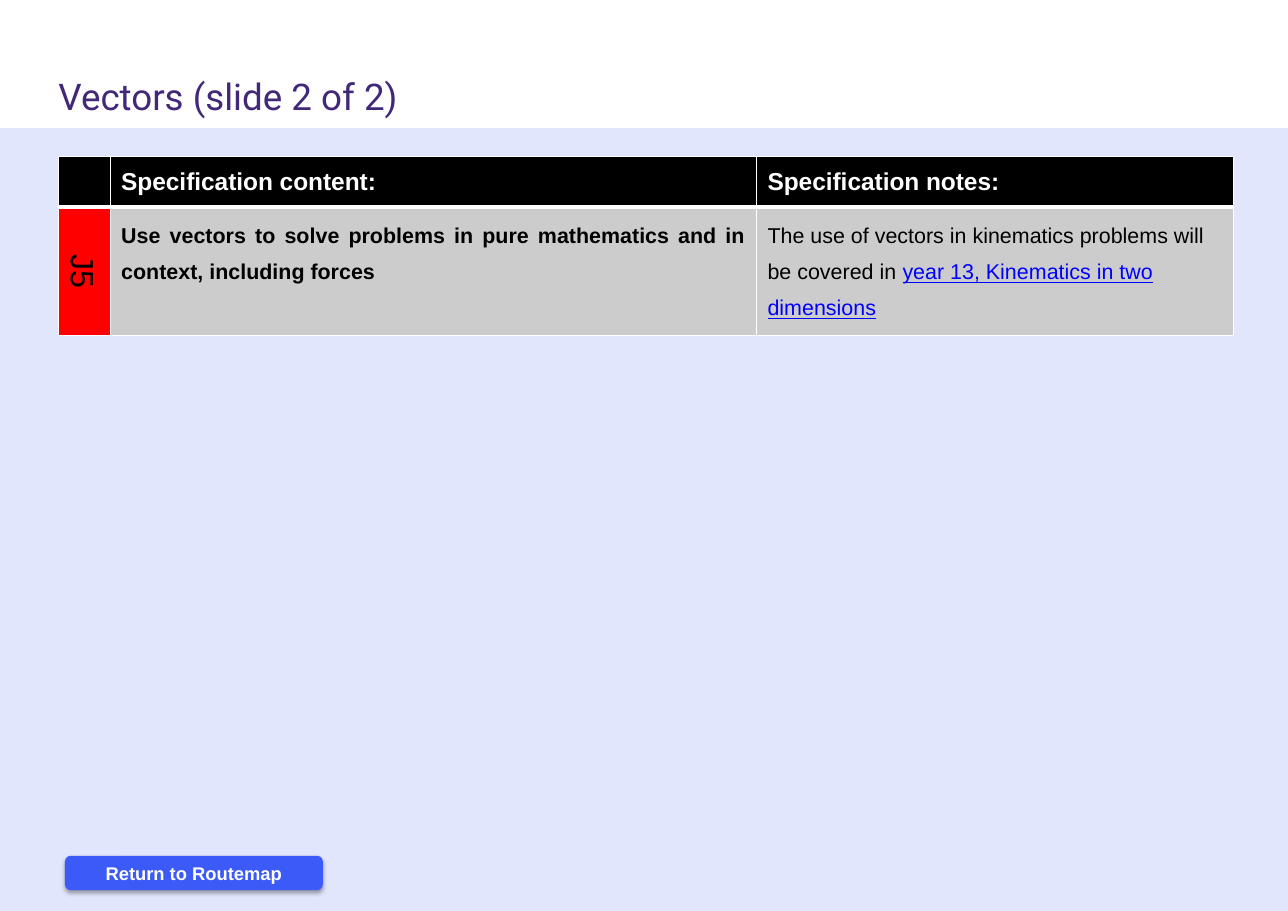
"""Build the second Vectors slide of a mathematics scheme of work."""
from dataclasses import dataclass

import pptx
import pptx.dml.color
import pptx.enum.shapes
import pptx.enum.text
import pptx.oxml
import pptx.oxml.ns
import pptx.util

Pt = pptx.util.Pt
Align = pptx.enum.text.PP_ALIGN
Anchor = pptx.enum.text.MSO_ANCHOR
Shape = pptx.enum.shapes.MSO_SHAPE


@dataclass(frozen=True)
class Theme:
    body_font: str = "Arial"
    title_font: str = "Roboto"
    blue: str = "3B5AF7"
    purple: str = "412878"
    white: str = "FFFFFF"
    black: str = "000000"
    red: str = "FF0000"
    grey: str = "CCCCCC"
    link: str = "0000FF"
    title_size: float = 24
    code_size: float = 21
    header_size: float = 16
    body_size: float = 14
    button_size: float = 12
    tint: int = 15


def rgb(color):
    return pptx.dml.color.RGBColor.from_string(color)


def xml(tag, attributes, content):
    namespace = pptx.oxml.ns.nsdecls("a")
    return pptx.oxml.parse_xml(f"<a:{tag} {namespace} {attributes}>{content}</a:{tag}>")


class SpecificationSlide:
    def __init__(self, slide, theme):
        self.slide = slide
        self.theme = theme

    def format_run(self, run, size, color, bold=False, font=None, underline=None):
        run.font.name = font or self.theme.body_font
        run.font.size = Pt(size)
        run.font.bold = bold
        run.font.underline = underline
        run.font.color.rgb = rgb(color)

    def title(self, text, left, top, width, height):
        heading = self.slide.shapes.title
        heading.left, heading.top = Pt(left), Pt(top)
        heading.width, heading.height = Pt(width), Pt(height)
        frame = heading.text_frame
        frame.text = text
        frame.auto_size = pptx.enum.text.MSO_AUTO_SIZE.NONE
        frame.vertical_anchor = Anchor.MIDDLE
        paragraph = frame.paragraphs[0]
        paragraph.alignment = Align.LEFT
        self.format_run(paragraph.runs[0], self.theme.title_size, self.theme.purple,
                        font=self.theme.title_font)

    def block(self, kind, left, top, width, height):
        shape = self.slide.shapes.add_shape(kind, Pt(left), Pt(top), Pt(width), Pt(height))
        shape.shadow.inherit = False
        shape.fill.solid()
        shape.fill.fore_color.rgb = rgb(self.theme.blue)
        shape.line.fill.background()
        return shape

    def backdrop(self, *place):
        panel = self.block(Shape.RECTANGLE, *place)
        color = panel.fill._xPr.find(".//" + pptx.oxml.ns.qn("a:srgbClr"))
        color.append(xml("alpha", f'val="{self.theme.tint * 1000}"', ""))

    def button(self, text, *place):
        button = self.block(Shape.ROUNDED_RECTANGLE, *place)
        effects = button._element.spPr.find(pptx.oxml.ns.qn("a:effectLst"))
        effects.append(xml(
            "outerShdw",
            f'blurRad="{Pt(3.1)}" dist="{Pt(1.8)}" dir="5400000" rotWithShape="0"',
            f'<a:srgbClr val="{self.theme.black}"><a:alpha val="35000"/></a:srgbClr>'))
        frame = button.text_frame
        frame.text = text
        frame.vertical_anchor = Anchor.MIDDLE
        paragraph = frame.paragraphs[0]
        paragraph.alignment = Align.CENTER
        self.format_run(paragraph.runs[0], self.theme.button_size, self.theme.white, bold=True)

    def table(self, left, top, columns, rows):
        frame = self.slide.shapes.add_table(len(rows), len(columns), Pt(left), Pt(top),
                                            Pt(sum(columns)), Pt(sum(rows)))
        table = frame.table
        table.first_row = table.horz_banding = False
        for column, width in zip(table.columns, columns):
            column.width = Pt(width)
        for row, height in zip(table.rows, rows):
            row.height = Pt(height)
        return table

    def cell(self, cell, fill, edges):
        cell.fill.solid()
        cell.fill.fore_color.rgb = rgb(fill)
        properties = cell._tc.get_or_add_tcPr()
        line = f'<a:solidFill><a:srgbClr val="{self.theme.white}"/></a:solidFill>'
        for index, (side, width) in enumerate(zip("LRTB", edges)):
            properties.insert(index, xml(f"ln{side}", f'w="{Pt(width)}"', line))

    def cell_text(self, cell, text, size, color, bold=False, align=Align.LEFT, spacing=None):
        cell.text_frame.text = text
        paragraph = cell.text_frame.paragraphs[0]
        paragraph.alignment = align
        paragraph.line_spacing = spacing
        self.format_run(paragraph.runs[0], size, color, bold)
        return paragraph

    def specification(self, left, top, columns, rows):
        theme = self.theme
        table = self.table(left, top, columns, rows)
        for column in range(len(columns)):
            self.cell(table.cell(0, column), theme.black, (1, 1, 1, 3))
            self.cell(table.cell(1, column), theme.grey if column else theme.red, (1, 1, 3, 1))

        for column, heading in enumerate(("Specification content:", "Specification notes:"), 1):
            header = table.cell(0, column)
            header.vertical_anchor = Anchor.MIDDLE
            self.cell_text(header, heading, theme.header_size, theme.white, bold=True)

        code, content, notes = (table.cell(1, column) for column in range(3))
        code._tc.get_or_add_tcPr().set("vert", "vert")
        self.cell_text(code, "J5", theme.code_size, theme.black, align=Align.CENTER)
        self.cell_text(content, "Use vectors to solve problems in pure mathematics and in "
                       "context, including forces", theme.body_size, theme.black,
                       bold=True, align=Align.JUSTIFY, spacing=1.5)
        paragraph = self.cell_text(
            notes, "The use of vectors in kinematics problems will be covered in ",
            theme.body_size, theme.black, spacing=1.5)
        reference = paragraph.add_run()
        reference.text = "year 13, Kinematics in two dimensions"
        self.format_run(reference, theme.body_size, theme.link, underline=True)


def main():
    deck = pptx.Presentation()
    deck.slide_width, deck.slide_height = Pt(841.68), Pt(595.44)
    page = SpecificationSlide(deck.slides.add_slide(deck.slide_layouts[5]), Theme())
    page.backdrop(0, 83.8, 841.68, 511.64)
    page.button("Return to Routemap", 42.5, 559.4, 168.5, 22.5)
    page.specification(38.2, 102.2, (33.8, 422.4, 311.8), (33, 84))
    page.title("Vectors (slide 2 of 2)", 31, 44.6, 368.6, 36)
    deck.save("out.pptx")


if __name__ == "__main__":
    main()
